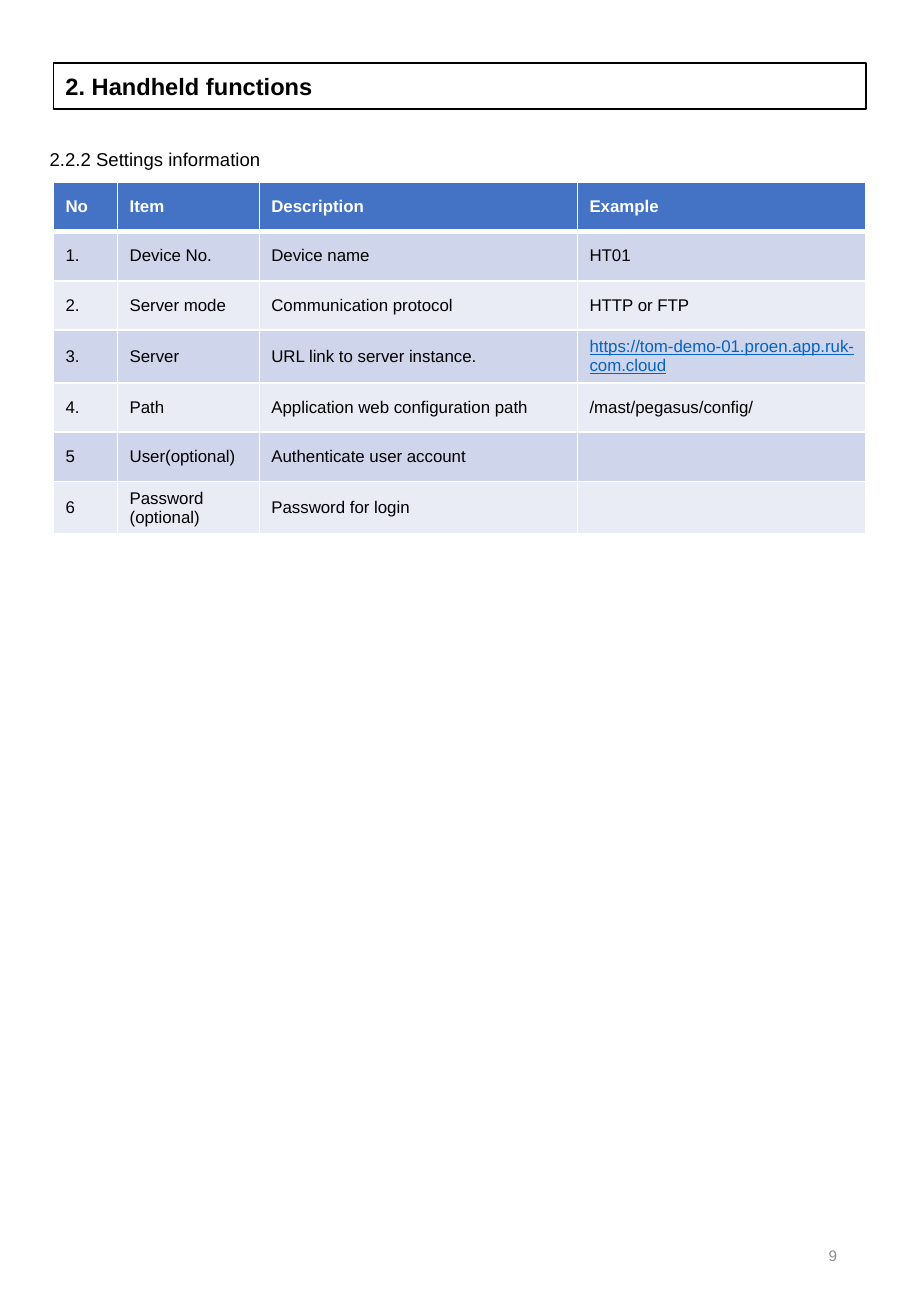
from lxml import etree
from pptx import Presentation
from pptx.dml.color import RGBColor
from pptx.enum import shapes, text
from pptx.oxml import ns
from pptx.util import Pt

# Content
HEADING = "2. Handheld functions"
SUBHEADING = "2.2.2 Settings information"
PAGE_NUMBER = "9"
SETTINGS = [
    ("No", "Item", "Description", "Example"),
    ("1.", "Device No.", "Device name", "HT01"),
    ("2.", "Server mode", "Communication protocol", "HTTP or FTP"),
    ("3.", "Server", "URL link to server instance.",
     "https://tom-demo-01.proen.app.ruk-com.cloud"),
    ("4.", "Path", "Application web configuration path", "/mast/pegasus/config/"),
    ("5", "User(optional)", "Authenticate user account", ""),
    ("6", "Password (optional)", "Password for login", ""),
]

# Layout and formats, lengths in points
LEFT, WIDTH = 31.7, 481.7
TABLE_TOP, ROW_HEIGHT = 108, 29.2
COLUMN_WIDTHS = (38, 84, 188.6, 171.1)
HEADER_FILL, BAND_FILLS = "4472C4", ("CFD5EA", "E9EBF5")
BODY = {"size": Pt(10), "color": "000000"}
HEADER = {"size": Pt(10), "color": "FFFFFF", "bold": True}
LINK = {"size": Pt(10), "color": "0563C1", "underline": True}


def paint(target, color):
    target.solid()
    target.fore_color.rgb = RGBColor.from_string(color)


def write(frame, wording, formats, align=text.PP_ALIGN.LEFT):
    paragraph = frame.paragraphs[0]
    paragraph.alignment = align
    if not wording:
        return
    font = paragraph.add_run().font
    paragraph.runs[0].text = wording
    font.name = "Arial"
    for name, value in formats.items():
        if name == "color":
            paint(font.fill, value)
        else:
            setattr(font, name, value)


def add_text(box, wording, formats, anchor, align=text.PP_ALIGN.LEFT):
    frame = box.text_frame
    frame.word_wrap = True
    frame.vertical_anchor = anchor
    write(frame, wording, formats, align)


def add_border(cell, side, width):
    properties = cell._tc.get_or_add_tcPr()
    line = etree.SubElement(properties, ns.qn("a:ln" + side), w=str(Pt(width)))
    fill = etree.SubElement(line, ns.qn("a:solidFill"))
    etree.SubElement(fill, ns.qn("a:srgbClr"), val="FFFFFF")


presentation = Presentation()
presentation.slide_width, presentation.slide_height = Pt(540), Pt(779.76)
slide = presentation.slides.add_slide(presentation.slide_layouts[6])

# Heading frame
heading = slide.shapes.add_shape(
    shapes.MSO_SHAPE.RECTANGLE, Pt(LEFT), Pt(37.5), Pt(WIDTH), Pt(27.3))
heading.shadow.inherit = False
heading.fill.background()
paint(heading.line.fill, "000000")
heading.line.width = Pt(1)
add_text(heading, HEADING, {"size": Pt(14), "color": "000000", "bold": True},
         text.MSO_ANCHOR.MIDDLE)

# Subheading and page number
subheading = slide.shapes.add_textbox(Pt(22.3), Pt(84.2), Pt(330.5), Pt(20.6))
add_text(subheading, SUBHEADING, {"size": Pt(11), "color": "000000"},
         text.MSO_ANCHOR.TOP)
page_number = slide.shapes.add_textbox(Pt(381.6), Pt(722.9), Pt(121.7), Pt(41.8))
add_text(page_number, PAGE_NUMBER, {"size": Pt(9), "color": "8C8C8C"},
         text.MSO_ANCHOR.MIDDLE, text.PP_ALIGN.RIGHT)

# Settings table
table = slide.shapes.add_table(
    len(SETTINGS), len(COLUMN_WIDTHS), Pt(LEFT), Pt(TABLE_TOP),
    Pt(WIDTH), Pt(ROW_HEIGHT * len(SETTINGS))).table
for column, width in zip(table.columns, COLUMN_WIDTHS):
    column.width = Pt(width)
for row_index, values in enumerate(SETTINGS):
    table.rows[row_index].height = Pt(ROW_HEIGHT)
    is_header = row_index == 0
    for column_index, value in enumerate(values):
        cell = table.cell(row_index, column_index)
        cell.vertical_anchor = text.MSO_ANCHOR.MIDDLE
        borders = {"L": 1, "R": 1, "T": 3 if row_index == 1 else 1,
                   "B": 3 if is_header else 1}
        for side, width in borders.items():
            add_border(cell, side, width)
        paint(cell.fill, HEADER_FILL if is_header else BAND_FILLS[(row_index - 1) % 2])
        is_link = value.startswith("https:")
        write(cell.text_frame, value, HEADER if is_header else LINK if is_link else BODY)

presentation.save("out.pptx")
